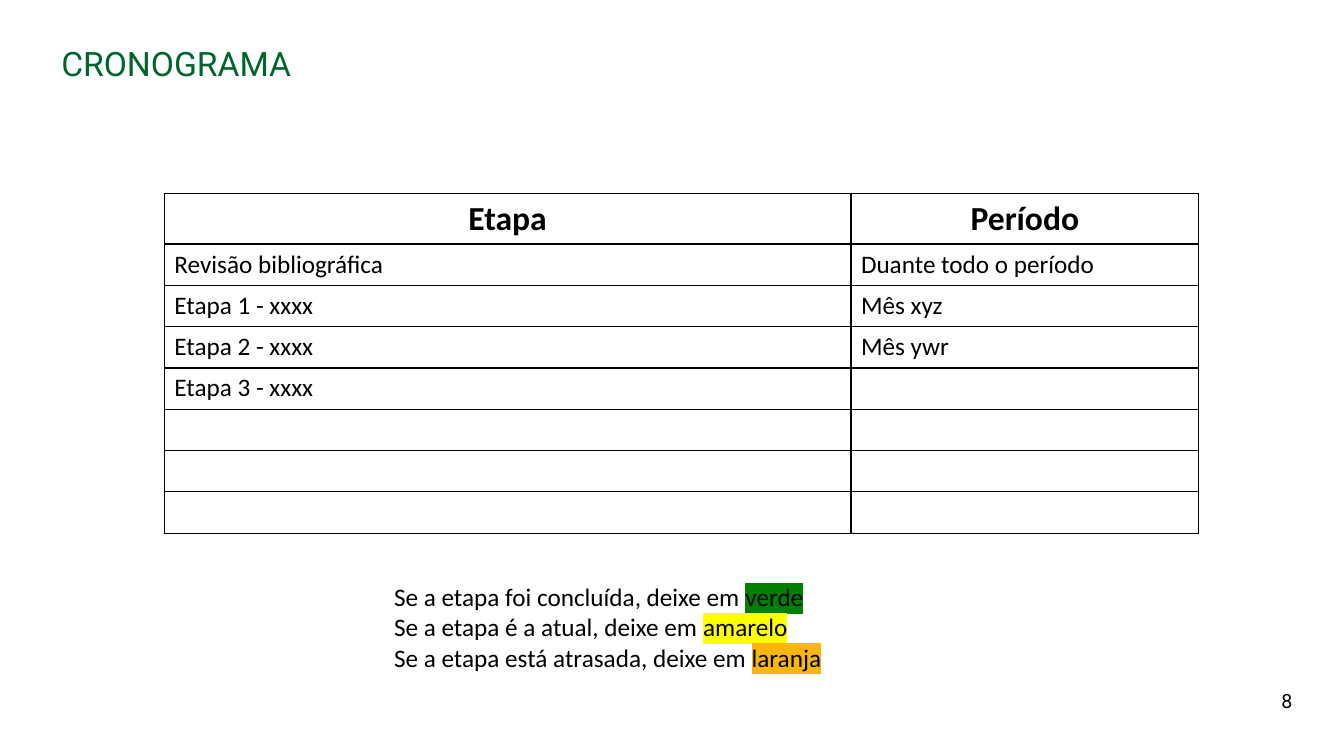
from lxml import etree
from pptx import Presentation
from pptx.dml.color import RGBColor
from pptx.enum.text import MSO_ANCHOR, PP_ALIGN
from pptx.oxml.ns import qn
from pptx.util import Pt

EMU_PER_PX = 9144
MIDDLE, TOP = MSO_ANCHOR.MIDDLE, MSO_ANCHOR.TOP
LEFT, CENTER = PP_ALIGN.LEFT, PP_ALIGN.CENTER
COLORS = {
    "title": "00642D",
    "text": "000000",
    "border": "000000",
    "verde": "008000",
    "amarelo": "FFFF00",
    "laranja": "F9B60D",
}
SCHEDULE = [
    ("Etapa", "Período"),
    ("Revisão bibliográfica", "Duante todo o período"),
    ("Etapa 1 - xxxx", "Mês xyz"),
    ("Etapa 2 - xxxx", "Mês ywr"),
    ("Etapa 3 - xxxx", ""),
    ("", ""),
    ("", ""),
    ("", ""),
]
LEGEND = [
    ("Se a etapa foi concluída, deixe em ", "verde"),
    ("Se a etapa é a atual, deixe em ", "amarelo"),
    ("Se a etapa está atrasada, deixe em ", "laranja"),
]


def px(*lengths):
    return [length * EMU_PER_PX for length in lengths]


class SlideBuilder:
    heading_font = "Roboto"
    body_font = "Calibri"

    def __init__(self, presentation):
        self.slide = presentation.slides.add_slide(presentation.slide_layouts[6])

    def style(self, font, size, name, color="text", bold=False):
        font.size = Pt(size)
        font.name = name
        font.bold = bold
        font.color.rgb = RGBColor.from_string(COLORS[color])

    def text(self, box, content, size, name, color="text", anchor=TOP, wrap=False):
        text_frame = self.slide.shapes.add_textbox(*px(*box)).text_frame
        text_frame.word_wrap = wrap
        text_frame.vertical_anchor = anchor
        text_frame.text = content
        for paragraph in text_frame.paragraphs:
            for run in paragraph.runs:
                self.style(run.font, size, name, color)
        return text_frame

    def highlight(self, run, color):
        fill = run._r.get_or_add_rPr().find(qn("a:solidFill"))
        mark = etree.Element(qn("a:highlight"))
        etree.SubElement(mark, qn("a:srgbClr"), val=COLORS[color])
        fill.addnext(mark)

    def legend(self, box, lines, size):
        content = "\n".join(sentence for sentence, _ in lines)
        text_frame = self.text(box, content, size, self.body_font)
        for paragraph, (_, color) in zip(text_frame.paragraphs, lines):
            run = paragraph.add_run()
            run.text = color
            self.style(run.font, size, self.body_font)
            self.highlight(run, color)

    def borders(self, cell):
        properties = cell._tc.get_or_add_tcPr()
        for index, side in enumerate(("lnL", "lnR", "lnT", "lnB")):
            line = etree.Element(qn(f"a:{side}"), w=str(Pt(1)))
            fill = etree.SubElement(line, qn("a:solidFill"))
            etree.SubElement(fill, qn("a:srgbClr"), val=COLORS["border"])
            properties.insert(index, line)

    def table(self, left, top, widths, heights, rows):
        box = px(left, top, sum(widths), sum(heights))
        table = self.slide.shapes.add_table(len(rows), len(widths), *box).table
        table.first_row = table.horz_banding = False
        for column, width in zip(table.columns, px(*widths)):
            column.width = width
        for row, height in zip(table.rows, px(*heights)):
            row.height = height
        for row_index, values in enumerate(rows):
            header = row_index == 0
            for column_index, value in enumerate(values):
                cell = table.cell(row_index, column_index)
                cell.fill.background()
                self.borders(cell)
                cell.text_frame.text = value
                paragraph = cell.text_frame.paragraphs[0]
                paragraph.alignment = CENTER if header else LEFT
                for run in paragraph.runs:
                    self.style(run.font, 24 if header else 18, self.body_font, bold=header)


def main():
    presentation = Presentation()
    presentation.slide_width, presentation.slide_height = px(1333, 750)
    builder = SlideBuilder(presentation)
    title = builder.text((51, 35, 766, 60), "CRONOGRAMA", 24, builder.heading_font,
                         "title", MIDDLE, True)
    title.paragraphs[0].line_spacing = 0.9
    builder.text((1261, 679, 31, 34), "8", 14, builder.heading_font)
    builder.table(163, 192, [681, 345], [50] + [41] * (len(SCHEDULE) - 1), SCHEDULE)
    builder.legend((381, 572, 449, 101), LEGEND, 18)
    presentation.save("out.pptx")


if __name__ == "__main__":
    main()
